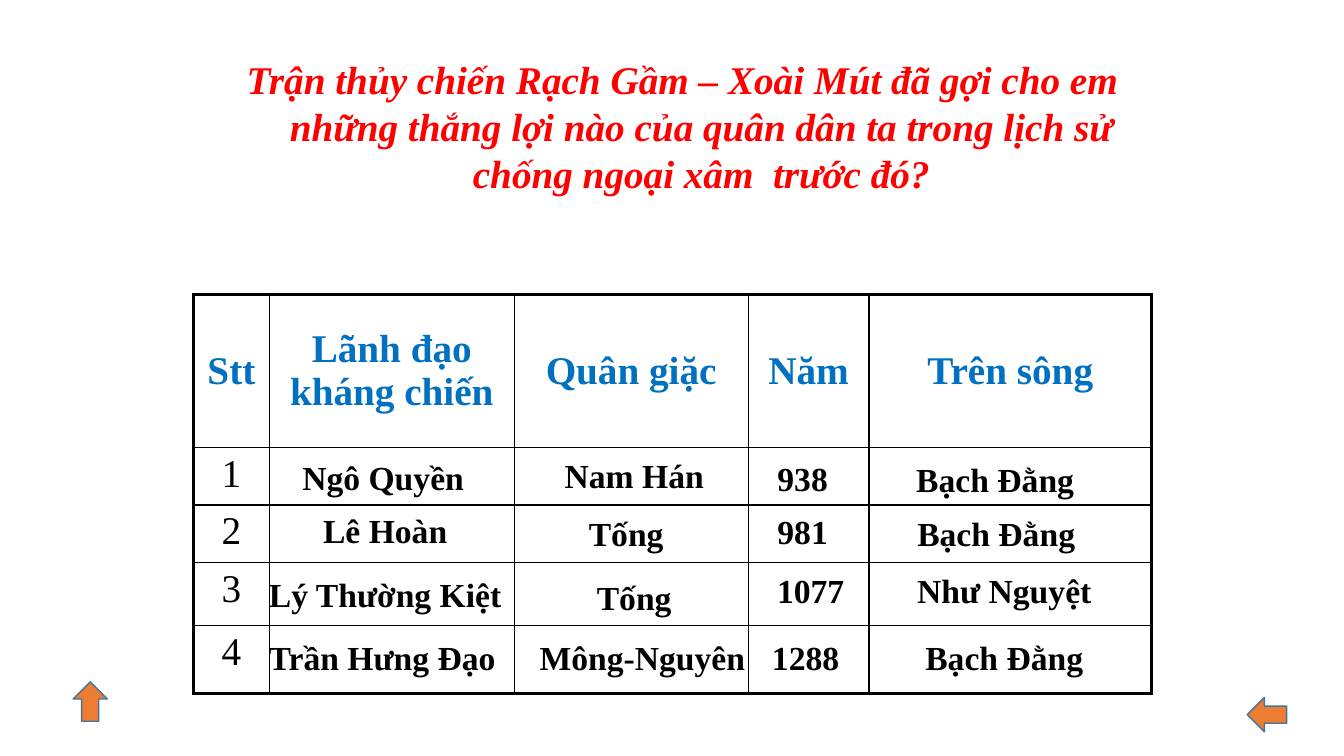
"""Build a quiz slide on river victories with a table and two arrows."""
import pptx
import pptx.util
import pptx.dml.color
import pptx.enum.shapes
import pptx.enum.text
import pptx.oxml

Inches = pptx.util.Inches
Pt = pptx.util.Pt
MIDDLE = pptx.enum.text.MSO_ANCHOR.MIDDLE


def color(code):
    return pptx.dml.color.RGBColor.from_string(code)


def write(frame, text, size, code, bold=True, italic=False):
    frame.word_wrap = True
    par = frame.paragraphs[0]
    par.alignment = pptx.enum.text.PP_ALIGN.CENTER
    run = par.add_run()
    run.text = text
    run.font.name = "Times New Roman"
    run.font.size = Pt(size)
    run.font.bold = bold
    run.font.italic = italic
    run.font.color.rgb = color(code)
    return par


deck = pptx.Presentation()
deck.slide_width = Inches(13.33)
deck.slide_height = Inches(7.5)
slide = deck.slides.add_slide(deck.slide_layouts[6])
shapes = slide.shapes

title = shapes.add_textbox(Inches(2.14), Inches(0.5), Inches(9.25), Inches(2.17))
par = write(
    title.text_frame,
    "Trận thủy chiến Rạch Gầm – Xoài Mút đã gợi cho em những thắng lợi nào "
    "của quân dân ta trong lịch sử chống ngoại xâm  trước đó?",
    28, "FF0000", italic=True)
props = par._p.get_or_add_pPr()
props.set("marL", str(Inches(0.38)))
props.set("indent", str(-Inches(0.38)))

heads = ["Stt", "Lãnh đạo kháng chiến", "Quân giặc", "Năm", "Trên sông"]
widths = [0.75, 2.43, 2.32, 1.2, 2.8]
heights = [1.52, 0.57, 0.57, 0.63, 0.67]
table = shapes.add_table(5, 5, Inches(1.92), Inches(2.92),
                         Inches(9.5), Inches(3.95)).table
table.first_row = False
table.horz_banding = False
for col, width in zip(table.columns, widths):
    col.width = Inches(width)
for row, height in zip(table.rows, heights):
    row.height = Inches(height)

for r in range(5):
    for c in range(5):
        cell = table.cell(r, c)
        cell.fill.background()
        if r == 0:
            cell.vertical_anchor = MIDDLE
            write(cell.text_frame, heads[c], 28, "0070C0")
        elif c == 0:
            write(cell.text_frame, str(r), 28, "000000", bold=False)
        edges = {"L": c == 0, "R": c == 4, "T": r == 0, "B": r == 4}
        for place, (side, outer) in enumerate(edges.items()):
            line = pptx.oxml.parse_xml(
                f'<a:ln{side} xmlns:a="http://schemas.openxmlformats.org/drawingml/2006/main" '
                f'w="{Pt(2.25 if outer else 1)}"><a:solidFill><a:srgbClr val="000000"/>'
                f'</a:solidFill></a:ln{side}>')
            cell._tc.get_or_add_tcPr().insert(place, line)

answers = [
    (2.58, [("Ngô Quyền", 2.51, 4.48), ("Lê Hoàn", 2.53, 5),
            ("Lý Thường Kiệt", 2.53, 5.64), ("Trần Hưng Đạo", 2.5, 6.26)]),
    (2.58, [("Nam Hán", 5, 4.46), ("Tống", 4.92, 5.03),
            ("Tống", 5, 5.67), ("Mông-Nguyên", 5.08, 6.26)]),
    (1.42, [("938", 7.25, 4.49), ("981", 7.25, 5.01),
            ("1077", 7.33, 5.6), ("1288", 7.28, 6.26)]),
    (2.42, [("Bạch Đằng", 8.66, 4.5), ("Bạch Đằng", 8.67, 5.03),
            ("Như Nguyệt", 8.75, 5.6), ("Bạch Đằng", 8.75, 6.26)]),
]
for width, items in answers:
    for text, left, top in items:
        box = shapes.add_textbox(Inches(left), Inches(top), Inches(width), Inches(0.51))
        box.text_frame.vertical_anchor = MIDDLE
        box.text_frame.auto_size = pptx.enum.text.MSO_AUTO_SIZE.SHAPE_TO_FIT_TEXT
        write(box.text_frame, text, 24, "000000")

for left, top, angle in [(0.7, 6.79, 90), (12.37, 6.92, 0)]:
    arrow = shapes.add_shape(pptx.enum.shapes.MSO_SHAPE.LEFT_ARROW,
                             Inches(left), Inches(top), Inches(0.39), Inches(0.34))
    arrow.rotation = angle
    arrow.shadow.inherit = False
    arrow.fill.solid()
    arrow.fill.fore_color.rgb = color("ED7D31")
    arrow.line.color.rgb = color("43739E")
    arrow.line.width = Pt(1)

deck.save("out.pptx")
